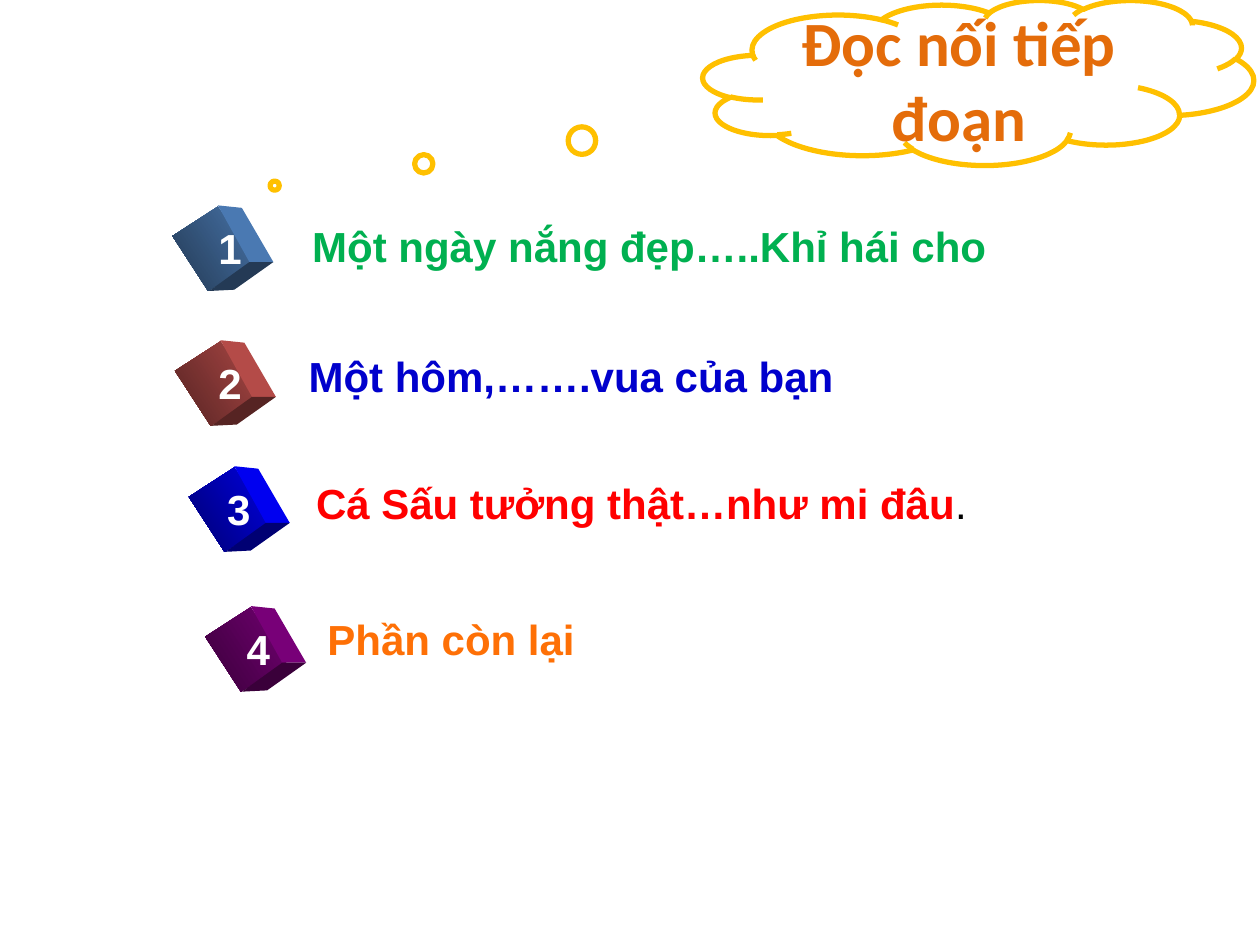
"""Build a reading-practice slide with four numbered cubes and a cloud title."""
import pptx
import pptx.dml.color
import pptx.enum.shapes
import pptx.enum.text
import pptx.util

RGB = pptx.dml.color.RGBColor
INCH = pptx.util.Inches
KIND = pptx.enum.shapes.MSO_SHAPE
ALIGN = pptx.enum.text.PP_ALIGN
WHITE = RGB(255, 255, 255)
BLACK = RGB(0, 0, 0)
GOLD = RGB(0xFF, 0xC0, 0x00)
RUST = RGB(0xE4, 0x6C, 0x0A)
GREEN = RGB(0x00, 0xB0, 0x50)
NAVY = RGB(0x00, 0x00, 0xCC)
RED = RGB(0xFF, 0x00, 0x00)
AMBER = RGB(0xFE, 0x70, 0x06)
STEEL = RGB(0x4F, 0x81, 0xBD)
BRICK = RGB(0xC0, 0x50, 0x4D)
BLUE = RGB(0x00, 0x00, 0xFF)
PLUM = RGB(0x80, 0x00, 0x80)

TITLE = "Đọc nối tiếp đoạn"
CLOUD = (5.58, 0, 4.37, 1.31)
TAIL = (-1.278, 0.625)
ROWS = [
    {"cube": (1.43, 1.76, STEEL), "num": (1.63, 1.72, 0.39), "box": (2.38, 1.7, 5.6),
     "text": [("Một ngày nắng đẹp…..Khỉ hái cho", GREEN, True)]},
    {"cube": (1.45, 2.83, BRICK), "num": (1.63, 2.79, 0.39), "box": (2.35, 2.73, 4.41),
     "text": [("Một hôm,…….vua của bạn", NAVY, True)]},
    {"cube": (1.56, 3.83, BLUE), "num": (1.7, 3.79, 0.39), "box": (2.41, 3.74, 5.41),
     "text": [("Cá Sấu tưởng thật…như mi đâu", RED, True), (".", BLACK, False)]},
    {"cube": (1.69, 4.94, PLUM), "num": (1.86, 4.9, 0.34), "box": (2.5, 4.82, 2.18),
     "text": [("Phần còn lại", AMBER, True)]},
]
FRONT = (0.52, 0.43)
TILT = 57
LIGHT = (0.88, 0.45)
SIDES = [
    ([(0.3, -0.13), (0.49, -0.11), (0.74, 0.32), (0.55, 0.32)], 0.94),
    ([(0.55, 0.32), (0.74, 0.32), (0.43, 0.54), (0.23, 0.55)], 0.45),
]


def shade(tint, part):
    """Darken a colour to the given share."""
    return RGB(*(round(c * part) for c in tint))


def write(frame, runs, align, font, size):
    """Put formatted runs in the first paragraph."""
    para = frame.paragraphs[0]
    para.alignment = align
    for text, tint, bold in runs:
        run = para.add_run()
        run.text = text
        form = {"name": font, "size": pptx.util.Pt(size), "bold": bold}
        for key, val in form.items():
            setattr(run.font, key, val)
        run.font.color.rgb = tint


def label(shapes, spot, runs, align):
    """Add a one-line text box."""
    left, top, width = spot
    box = shapes.add_textbox(*map(INCH, (left, top, width, 0.5)))
    form = {"word_wrap": False, "auto_size": pptx.enum.text.MSO_AUTO_SIZE.SHAPE_TO_FIT_TEXT}
    for key, val in form.items():
        setattr(box.text_frame, key, val)
    write(box.text_frame, runs, align, "Arial", 24)


def cube(shapes, left, top, tint):
    """Draw a tilted front face and the two sides behind it."""
    front = shapes.add_shape(KIND.RECTANGLE, *map(INCH, (left, top, *FRONT)))
    front.rotation = TILT
    front.shadow.inherit = False
    front.line.fill.background()
    front.fill.gradient()
    front.fill.gradient_angle = 270
    for stop, part in zip(front.fill.gradient_stops, LIGHT):
        stop.color.rgb = shade(tint, part)
    for face, part in SIDES:
        dots = [(INCH(left + x), INCH(top + y)) for x, y in face]
        pen = shapes.build_freeform(*dots[0])
        pen.add_line_segments(dots[1:], close=True)
        side = pen.convert_to_shape()
        side.shadow.inherit = False
        side.line.fill.background()
        side.fill.solid()
        side.fill.fore_color.rgb = shade(tint, part)


def cloud(shapes):
    """Draw the title cloud with its trail of bubbles."""
    shape = shapes.add_shape(KIND.CLOUD_CALLOUT, *map(INCH, CLOUD))
    for i, val in enumerate(TAIL):
        shape.adjustments[i] = val
    shape.shadow.inherit = False
    shape.fill.background()
    shape.line.color.rgb = GOLD
    shape.line.width = pptx.util.Pt(3)
    shape.text_frame.vertical_anchor = pptx.enum.text.MSO_ANCHOR.MIDDLE
    write(shape.text_frame, [(TITLE, RUST, True)], ALIGN.CENTER, "Calibri", 36)


def main():
    """Lay out the slide and save it."""
    deck = pptx.Presentation()
    deck.slide_width, deck.slide_height = INCH(10), INCH(7.5)
    shapes = deck.slides.add_slide(deck.slide_layouts[6]).shapes
    for i, row in enumerate(ROWS, 1):
        cube(shapes, *row["cube"])
        label(shapes, row["num"], [(str(i), WHITE, True)], ALIGN.CENTER)
        label(shapes, row["box"], row["text"], ALIGN.LEFT)
    cloud(shapes)
    deck.save("out.pptx")


if __name__ == "__main__":
    main()
